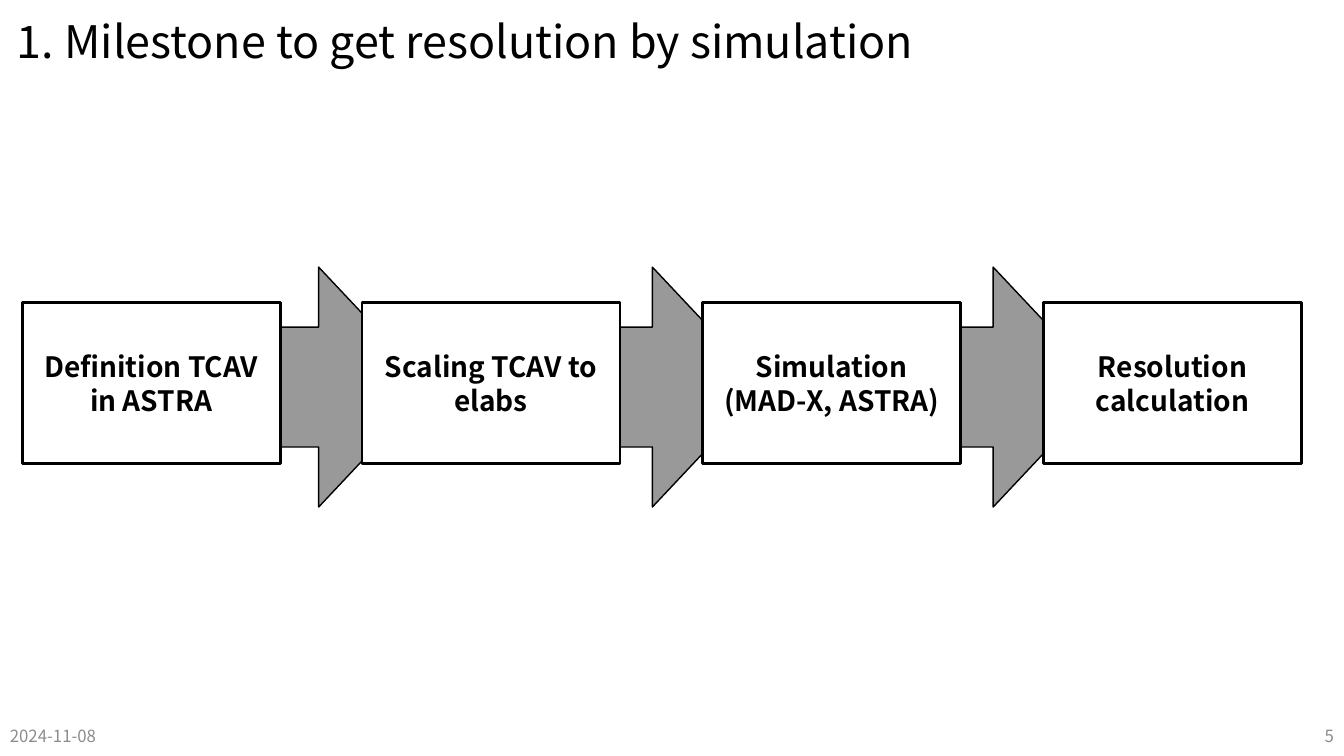
from lxml import etree
from pptx import Presentation
from pptx.dml.color import RGBColor
from pptx.enum.shapes import MSO_SHAPE as Preset
from pptx.enum.text import MSO_ANCHOR as Anchor, PP_ALIGN as Align
from pptx.oxml.ns import qn
from pptx.util import Pt

PX = 9144  # EMU per px, 100 px to the inch
FONT = "Noto Sans CJK KR"
COLORS = {"ink": "000000", "paper": "FFFFFF", "footer": "8C8C8C"}

STEPS = [
    ["Definition TCAV in ASTRA"],
    ["Scaling TCAV to elabs"],
    ["Simulation", "(MAD-X, ASTRA)"],
    ["Resolution", "calculation"],
]
STEP_LEFT, STEP_SPAN = 22, 1013  # first box, and distance to the last one
ARROW_LEFTS = [172, 503, 841]


def color(name):
    return RGBColor.from_string(COLORS[name])


def box_in_emu(*lengths):
    return [length * PX for length in lengths]


def write(shape, lines, size, ink="ink", align=Align.LEFT, bold=False, spacing=None):
    frame = shape.text_frame
    frame.word_wrap = True
    frame.vertical_anchor = Anchor.MIDDLE
    frame.text = "\n".join(lines)
    for paragraph in frame.paragraphs:
        paragraph.alignment = align
        paragraph.line_spacing = spacing
        font = paragraph.font
        font.name, font.size, font.bold = FONT, Pt(size), bold
        font.color.rgb = color(ink)


def add_text(slide, box, text, size, **style):
    write(slide.shapes.add_textbox(*box_in_emu(*box)), [text], size, **style)


def add_outlined(slide, preset, box, fill, line_width):
    shape = slide.shapes.add_shape(preset, *box_in_emu(*box))
    shape.shadow.inherit = False
    shape.fill.solid()
    shape.fill.fore_color.rgb = color(fill)
    shape.line.color.rgb = color("ink")
    shape.line.width = Pt(line_width)
    return shape


def add_arrow(slide, left):
    arrow = add_outlined(slide, Preset.RIGHT_ARROW, (left, 265, 256, 238), "ink", 1)
    arrow.adjustments[0] = 0.5
    arrow.adjustments[1] = 0.47
    # 40 % opaque fill
    fill_color = arrow.fill._xPr.find(qn("a:solidFill"))[0]
    etree.SubElement(fill_color, qn("a:alpha")).set("val", "40000")


def add_step(slide, left, lines):
    step = add_outlined(slide, Preset.RECTANGLE, (left, 300, 256, 160), "paper", 2)
    write(step, lines, 20, align=Align.CENTER, bold=True)


def main():
    presentation = Presentation()
    presentation.slide_width, presentation.slide_height = box_in_emu(1333, 750)
    slide = presentation.slides.add_slide(presentation.slide_layouts[6])

    # Title
    add_text(slide, (7, 7, 1150, 74), "1. Milestone to get resolution by simulation",
             32, spacing=0.9)

    # Footer: date and slide number
    add_text(slide, (0, 710, 300, 40), "2024-11-08", 12, ink="footer")
    add_text(slide, (1033, 710, 300, 40), "5", 12, ink="footer", align=Align.RIGHT)

    # Arrows, partly hidden behind the steps
    for left in reversed(ARROW_LEFTS):
        add_arrow(slide, left)

    # Steps, evenly spaced
    for index, lines in enumerate(STEPS):
        left = STEP_LEFT + index * STEP_SPAN // (len(STEPS) - 1)
        add_step(slide, left, lines)

    presentation.save("out.pptx")


if __name__ == "__main__":
    main()
